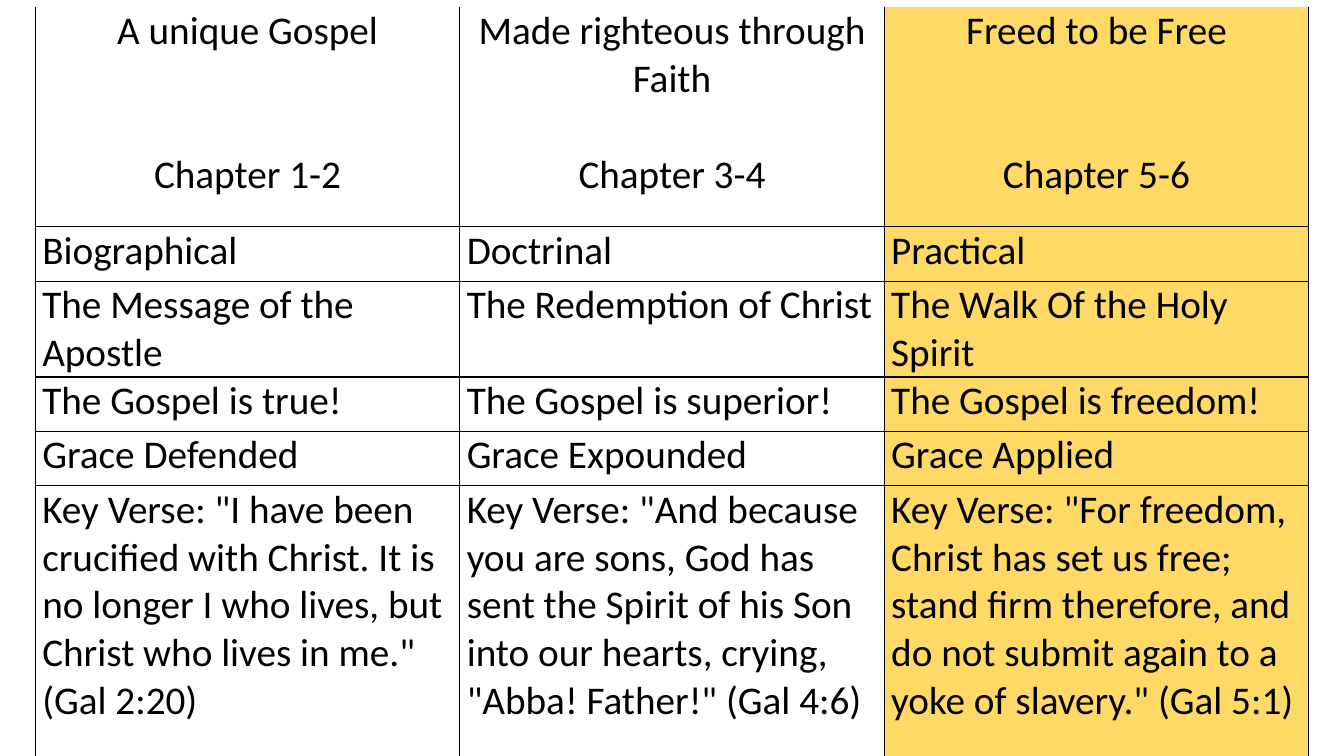
"""Build a slide with a three-column overview table of Galatians."""
from lxml.etree import SubElement
from pptx import Presentation
from pptx.dml.color import RGBColor
from pptx.enum.text import PP_ALIGN
from pptx.oxml.ns import qn
from pptx.util import Inches, Pt

COLORS = {"text": "000000", "border": "000000", "highlight": "FFD966"}
FONT_SIZE = 28
LINE_HEIGHT = 34.2
COLUMN_WIDTH = 4.21
ROW_HEIGHTS = [2.18, 0.54, 0.54, 0.54, 0.54, 2.7]
HIGHLIGHT_COLUMN = 2
HEADER_GAP_LINES = [2, 1, 2]
ROWS = [
    [["A unique Gospel", "Chapter 1-2"],
     ["Made righteous through Faith", "Chapter 3-4"],
     ["Freed to be Free", "Chapter 5-6"]],
    [["Biographical"], ["Doctrinal"], ["Practical"]],
    [["The Message of the Apostle"], ["The Redemption of Christ"],
     ["The Walk Of the Holy Spirit"]],
    [["The Gospel is true!"], ["The Gospel is superior!"],
     ["The Gospel is freedom!"]],
    [["Grace Defended"], ["Grace Expounded"], ["Grace Applied"]],
    [['Key Verse: "I have been crucified with Christ. It is no longer I who '
      'lives, but Christ who lives in me." (Gal 2:20)'],
     ['Key Verse: "And because you are sons, God has sent the Spirit of his '
      'Son into our hearts, crying, "Abba! Father!" (Gal 4:6)'],
     ['Key Verse: "For freedom, Christ has set us free; stand firm therefore, '
      'and do not submit again to a yoke of slavery." (Gal 5:1)']],
]


def add_borders(cell, has_top):
    """Draw the cell's borders, leaving the top open where asked."""
    properties = cell._tc.get_or_add_tcPr()
    for side in ("lnL", "lnR", "lnT", "lnB"):
        line = SubElement(properties, qn(f"a:{side}"), w=str(Pt(1)))
        if side == "lnT" and not has_top:
            SubElement(line, qn("a:noFill"))
        else:
            fill = SubElement(line, qn("a:solidFill"))
            SubElement(fill, qn("a:srgbClr"), val=COLORS["border"])


deck = Presentation()
deck.slide_width = Inches(13.33)
deck.slide_height = Inches(7.5)
page = deck.slides.add_slide(deck.slide_layouts[6])

table = page.shapes.add_table(
    len(ROWS), len(ROWS[0]), Inches(0.35), Inches(0.07),
    Inches(COLUMN_WIDTH * len(ROWS[0])), Inches(sum(ROW_HEIGHTS))).table
table.first_row = False
table.horz_banding = False
for column in table.columns:
    column.width = Inches(COLUMN_WIDTH)

for row_index, row_texts in enumerate(ROWS):
    is_header = row_index == 0
    table.rows[row_index].height = Inches(ROW_HEIGHTS[row_index])
    for column_index, lines in enumerate(row_texts):
        cell = table.cell(row_index, column_index)
        cell.margin_left = cell.margin_right = Inches(0.07)
        cell.margin_top = cell.margin_bottom = Inches(0)
        add_borders(cell, has_top=not is_header)
        if column_index == HIGHLIGHT_COLUMN:
            cell.fill.solid()
            cell.fill.fore_color.rgb = RGBColor.from_string(COLORS["highlight"])
        else:
            cell.fill.background()
        for line_index, text in enumerate(lines):
            frame = cell.text_frame
            para = frame.add_paragraph() if line_index else frame.paragraphs[0]
            para.alignment = PP_ALIGN.CENTER if is_header else PP_ALIGN.LEFT
            if line_index:
                para.space_before = Pt(HEADER_GAP_LINES[column_index] * LINE_HEIGHT)
            span = para.add_run()
            span.text = text
            span.font.name = "Calibri"
            span.font.size = Pt(FONT_SIZE)
            span.font.color.rgb = RGBColor.from_string(COLORS["text"])

deck.save("out.pptx")
